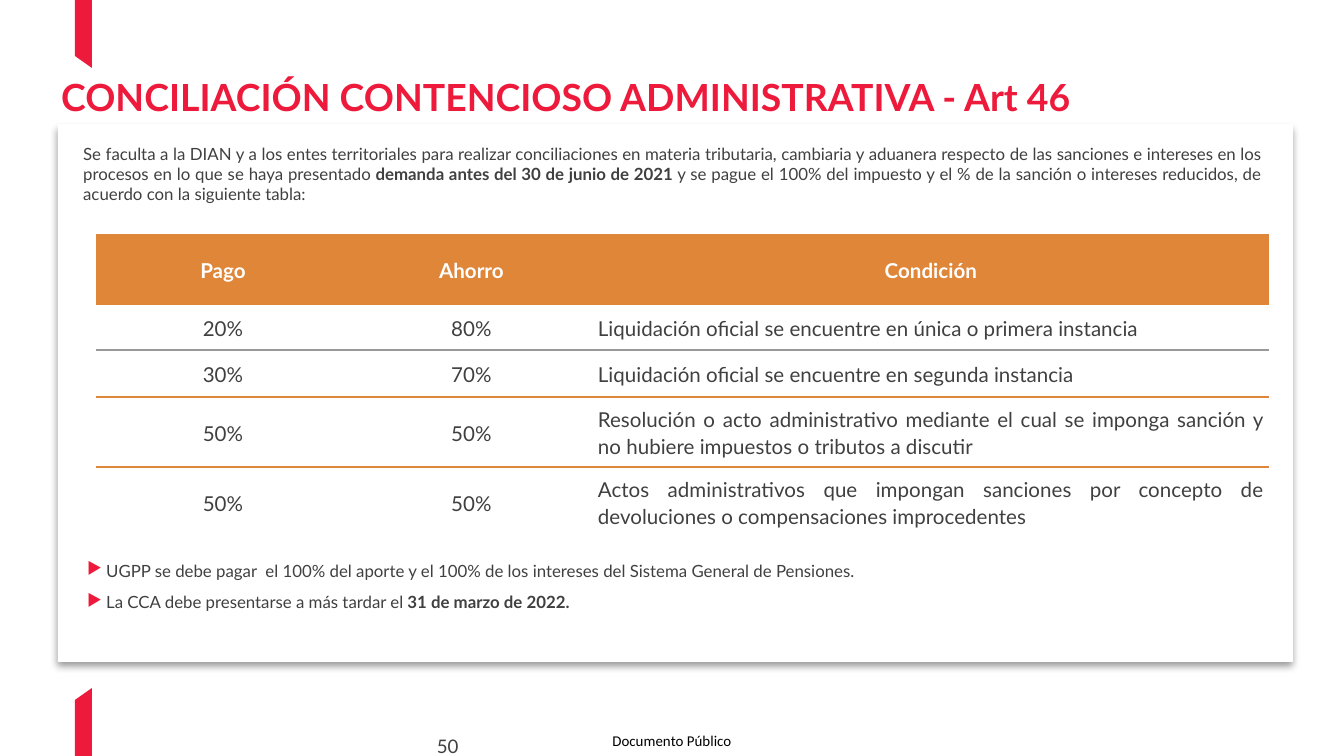
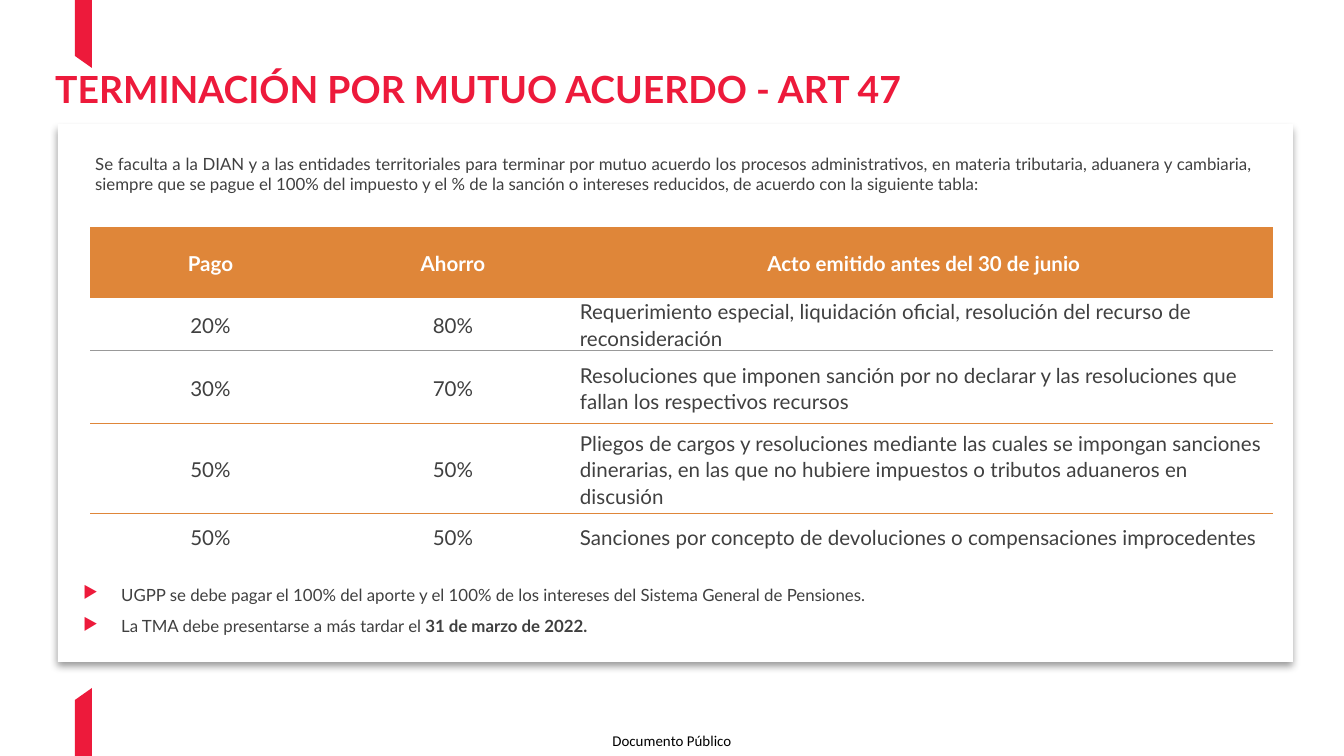
from lxml import etree
from pptx import Presentation
from pptx.dml.color import RGBColor
from pptx.enum.shapes import MSO_SHAPE
from pptx.enum.text import MSO_ANCHOR, PP_ALIGN
from pptx.oxml.ns import qn
from pptx.util import Emu, Pt

RECTANGLE = MSO_SHAPE.RECTANGLE
TOP, MIDDLE, BOTTOM = MSO_ANCHOR.TOP, MSO_ANCHOR.MIDDLE, MSO_ANCHOR.BOTTOM
LEFT, CENTER, JUSTIFY = PP_ALIGN.LEFT, PP_ALIGN.CENTER, PP_ALIGN.JUSTIFY

WIDTH, HEIGHT = 1344, 756
PX = 9144000 / WIDTH
COLORS = {
    "red": "ED1A3B",
    "orange": "DF8639",
    "gray": "999999",
    "text": "404040",
    "white": "FFFFFF",
    "black": "000000",
}
NO_GRID_STYLE = "{2D5ABB26-0587-4C30-8999-92F81FD0307C}"
ROW_LINES = ["orange", "gray", "orange", "orange", None]
BAND = [(75, 700), (75, 756), (92, 756), (92, 688)]
CARD = (58, 124, 1235, 538)
FOOTER = ("Documento Público", (594, 723, 156, 34))

SLIDES = [
    {
        "title": ("CONCILIACIÓN CONTENCIOSO ADMINISTRATIVA - Art 46", (48, 68, 1059, 56)),
        "page": ("50", (437, 734, 60, 23)),
        "intro": (
            [
                ("Se faculta a la DIAN y a los entes territoriales para realizar conciliaciones en materia "
                 "tributaria, cambiaria y aduanera respecto de las sanciones e intereses en los procesos en "
                 "lo que se haya presentado ", False),
                ("demanda antes del 30 de junio de 2021 ", True),
                ("y se pague el 100% del impuesto y el % de la sanción o intereses reducidos, de acuerdo "
                 "con la siguiente tabla:", False),
            ],
            (70, 137, 1204, 75),
        ),
        "table": {
            "corner": (96, 234),
            "columns": [254, 243, 676],
            "rows": [70, 46, 47, 70, 70],
            "condition_align": JUSTIFY,
            "cells": [
                ("Pago", "Ahorro", "Condición"),
                ("20%", "80%", "Liquidación oficial se encuentre en única o primera instancia"),
                ("30%", "70%", "Liquidación oficial se encuentre en segunda instancia"),
                ("50%", "50%", "Resolución o acto administrativo mediante el cual se imponga sanción y "
                               "no hubiere impuestos o tributos a discutir"),
                ("50%", "50%", "Actos administrativos que impongan sanciones por concepto de "
                               "devoluciones o compensaciones improcedentes"),
            ],
        },
        "notes": (
            [
                [("UGPP se debe pagar  el 100% del aporte y el 100% de los intereses del Sistema "
                  "General de Pensiones.", False)],
                [("La CCA debe presentarse a más tardar el ", False), ("31 de marzo de 2022.", True)],
            ],
            (74, 554, 1204, 66),
            19,
        ),
    },
    {
        "title": ("TERMINACIÓN POR MUTUO ACUERDO - ART 47", (42, 60, 896, 103)),
        "page": None,
        "intro": (
            [
                ("Se faculta a la DIAN y a las entidades territoriales para terminar por mutuo acuerdo los "
                 "procesos administrativos, en materia tributaria, aduanera y cambiaria, siempre que se "
                 "pague el 100% del impuesto y el % de la sanción o intereses reducidos, de acuerdo con la "
                 "siguiente tabla:", False),
            ],
            (82, 147, 1182, 54),
        ),
        "table": {
            "corner": (90, 227),
            "columns": [241, 244, 698],
            "rows": [70, 52, 73, 90, 46],
            "condition_align": LEFT,
            "cells": [
                ("Pago", "Ahorro", "Acto emitido antes del 30 de junio"),
                ("20%", "80%", "Requerimiento especial, liquidación oficial, resolución del recurso de "
                               "reconsideración"),
                ("30%", "70%", "Resoluciones que imponen sanción por no declarar y las resoluciones que "
                               "fallan los respectivos recursos"),
                ("50%", "50%", "Pliegos de cargos y resoluciones mediante las cuales se impongan sanciones "
                               "dinerarias, en las que no hubiere impuestos o tributos aduaneros en discusión"),
                ("50%", "50%", "Sanciones por concepto de devoluciones o compensaciones improcedentes"),
            ],
        },
        "notes": (
            [
                [("UGPP se debe pagar el 100% del aporte y el 100% de los intereses del Sistema General "
                  "de Pensiones.", False)],
                [("La TMA debe presentarse a más tardar el ", False), ("31 de marzo de 2022.", True)],
            ],
            (70, 578, 1206, 66),
            38,
        ),
    },
]


def px(value):
    return Emu(round(value * PX))


def rgb(name):
    return RGBColor.from_string(COLORS[name])


def child(parent, tag, **attributes):
    return etree.SubElement(parent, qn(tag), {key: str(value) for key, value in attributes.items()})


def set_font(paragraph, size, color, bold=None, face="Lato"):
    font = paragraph.font
    font.name, font.size, font.bold = face, Pt(size), bold
    font.color.rgb = rgb(color)


def add_runs(paragraph, runs):
    for words, bold in runs:
        run = paragraph.add_run()
        run.text = words
        if bold:
            run.font.bold = True


def add_box(slide, place, anchor=TOP, inset=True):
    frame = slide.shapes.add_textbox(*map(px, place)).text_frame
    frame.word_wrap = True
    frame.vertical_anchor = anchor
    if not inset:
        frame.margin_left = frame.margin_top = frame.margin_right = frame.margin_bottom = 0
    return frame


def add_band(slide, points):
    builder = slide.shapes.build_freeform(*points[0], scale=PX)
    builder.add_line_segments(points[1:], close=True)
    band = builder.convert_to_shape()
    band.shadow.inherit = False
    band.fill.solid()
    band.fill.fore_color.rgb = rgb("red")
    band.line.fill.background()


def add_frame(slide):
    add_band(slide, BAND)
    add_band(slide, [(x, HEIGHT - y) for x, y in BAND])
    words, place = FOOTER
    footer = add_box(slide, place, MIDDLE, inset=False).paragraphs[0]
    footer.text = words
    footer.alignment = CENTER
    set_font(footer, 8, "black", face="Calibri")

    card = slide.shapes.add_shape(RECTANGLE, *map(px, CARD))
    card.shadow.inherit = False
    card.fill.solid()
    card.fill.fore_color.rgb = rgb("white")
    card.line.fill.background()
    effects = card._element.spPr.find(qn("a:effectLst"))
    shadow = child(effects, "a:outerShdw", blurRad=Pt(4), dist=Pt(3), dir=5400000, algn="t", rotWithShape=0)
    child(child(shadow, "a:srgbClr", val=COLORS["black"]), "a:alpha", val=40000)


def add_border(cell, side, color):
    line = child(cell._tc.get_or_add_tcPr(), side, w=Pt(1))
    if color:
        child(child(line, "a:solidFill"), "a:srgbClr", val=COLORS[color])
    else:
        child(line, "a:noFill")


def fill_cell(cell, words, row, align):
    header = row == 0
    cell.margin_left = cell.margin_right = px(5)
    cell.margin_top, cell.margin_bottom = px(1), 0
    cell.vertical_anchor = MIDDLE
    add_border(cell, "a:lnT", None if header else ROW_LINES[row - 1])
    add_border(cell, "a:lnB", ROW_LINES[row])
    if header:
        cell.fill.solid()
        cell.fill.fore_color.rgb = rgb("orange")
    else:
        cell.fill.background()
    paragraph = cell.text_frame.paragraphs[0]
    paragraph.text = words
    paragraph.alignment = align
    paragraph.line_spacing = 1.07
    paragraph.space_after = Pt(8)
    set_font(paragraph, 11, "white" if header else "text", header)


def add_rates(slide, rates):
    columns, rows = rates["columns"], rates["rows"]
    place = (*rates["corner"], sum(columns), sum(rows))
    table = slide.shapes.add_table(len(rows), len(columns), *map(px, place)).table
    table.horz_banding = False
    table._tbl.tblPr.find(qn("a:tableStyleId")).text = NO_GRID_STYLE
    for column, width in zip(table.columns, columns):
        column.width = px(width)
    for row, (height, texts) in enumerate(zip(rows, rates["cells"])):
        table.rows[row].height = px(height)
        for column, words in enumerate(texts):
            is_condition = row > 0 and column == 2
            align = rates["condition_align"] if is_condition else CENTER
            fill_cell(table.cell(row, column), words, row, align)


def add_notes(slide, notes, place, indent):
    frame = add_box(slide, place)
    for index, runs in enumerate(notes):
        paragraph = frame.add_paragraph() if index else frame.paragraphs[0]
        paragraph.alignment = JUSTIFY
        paragraph.space_after = Pt(6)
        properties = paragraph._p.get_or_add_pPr()
        properties.set("marL", str(px(indent)))
        properties.set("indent", str(-px(indent)))
        child(child(properties, "a:buClr"), "a:srgbClr", val=COLORS["red"])
        child(properties, "a:buChar", char="▶")
        set_font(paragraph, 9, "text")
        add_runs(paragraph, runs)


def build_slide(slide, content):
    add_frame(slide)
    if content["page"]:
        words, place = content["page"]
        page = add_box(slide, place, BOTTOM, inset=False).paragraphs[0]
        page.text = words
        set_font(page, 10, "text")

    words, place = content["title"]
    title = add_box(slide, place).paragraphs[0]
    title.text = words
    set_font(title, 20, "red", True)

    runs, place = content["intro"]
    intro = add_box(slide, place).paragraphs[0]
    intro.alignment = JUSTIFY
    set_font(intro, 9, "text")
    add_runs(intro, runs)

    add_rates(slide, content["table"])
    add_notes(slide, *content["notes"])


def main():
    deck = Presentation()
    deck.slide_width, deck.slide_height = px(WIDTH), px(HEIGHT)
    for content in SLIDES:
        build_slide(deck.slides.add_slide(deck.slide_layouts[6]), content)
    deck.save("out.pptx")


if __name__ == "__main__":
    main()
